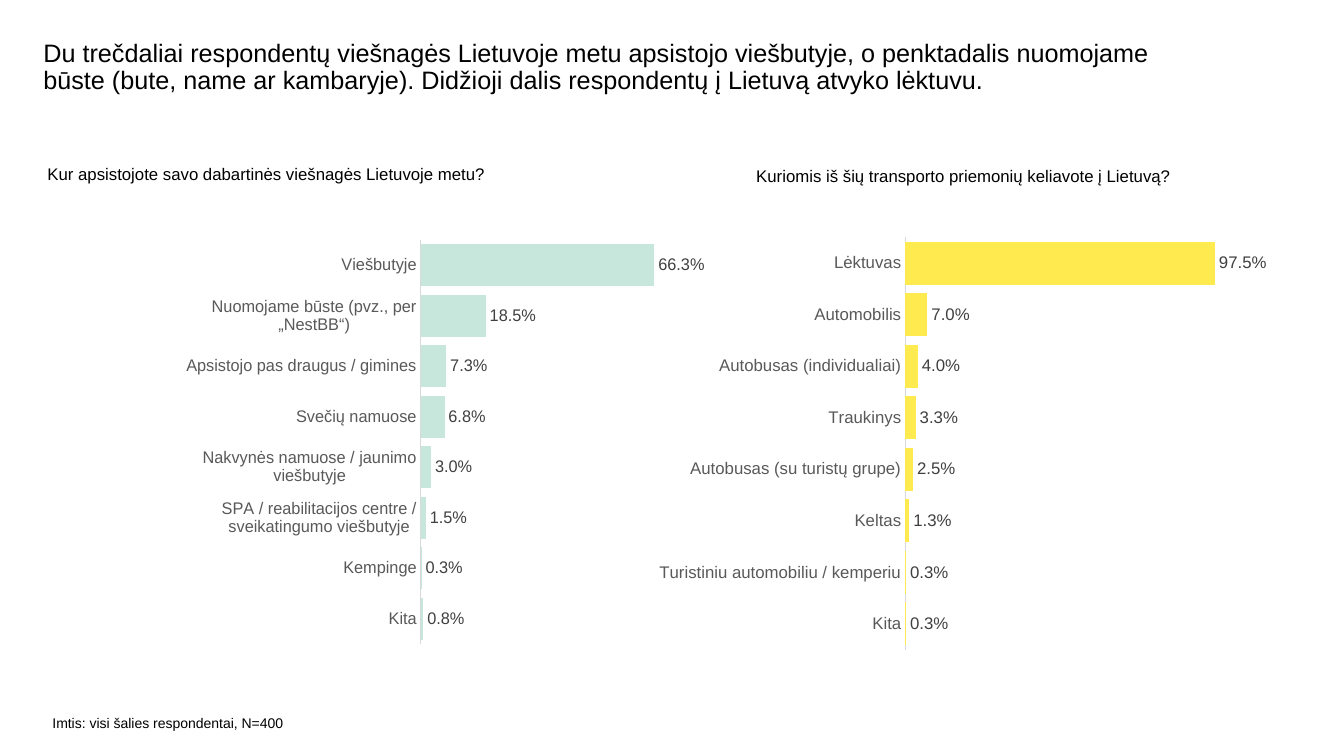
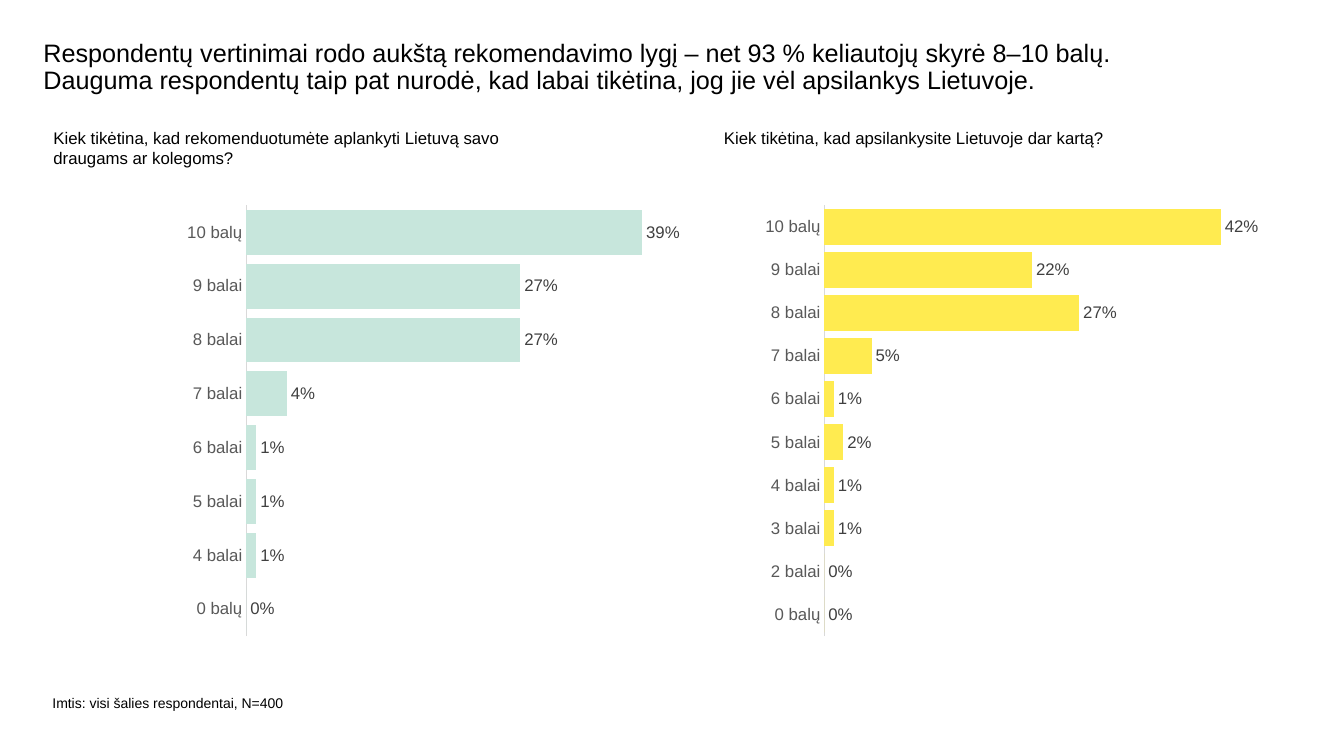
from dataclasses import dataclass

from lxml.etree import SubElement
from pptx import Presentation
from pptx.chart.data import CategoryChartData
from pptx.dml.color import RGBColor
from pptx.enum.chart import XL_CHART_TYPE, XL_LABEL_POSITION, XL_TICK_MARK
from pptx.oxml.ns import qn
from pptx.util import Inches, Pt


@dataclass(frozen=True)
class Theme:
    font: str = "Arial"
    ink: str = "000000"
    category: str = "595959"
    value: str = "404040"
    axis: str = "D9D9D9"
    mint: str = "C7E6DC"
    yellow: str = "FFEB50"
    title_size: int = 18
    body_size: int = 12
    note_size: int = 10


THEME = Theme()
TITLE_PLACE = (0.43, 0.4, 11.25, 0.6)
SAMPLE_NOTE = "Imtis: visi šalies respondentai, N=400"
BLANK_LAYOUT = 6

LODGING = [
    ("Viešbutyje", 0.663),
    ("Nuomojame būste (pvz., per „NestBB“)", 0.185),
    ("Apsistojo pas draugus / gimines", 0.073),
    ("Svečių namuose", 0.068),
    ("Nakvynės namuose / jaunimo viešbutyje", 0.03),
    ("SPA / reabilitacijos centre / sveikatingumo viešbutyje", 0.015),
    ("Kempinge", 0.003),
    ("Kita", 0.008),
]
TRANSPORT = [
    ("Lėktuvas", 0.975),
    ("Automobilis", 0.07),
    ("Autobusas (individualiai)", 0.04),
    ("Traukinys", 0.033),
    ("Autobusas (su turistų grupe)", 0.025),
    ("Keltas", 0.013),
    ("Turistiniu automobiliu / kemperiu", 0.003),
    ("Kita", 0.003),
]
RECOMMEND = [
    ("10 balų", 0.39), ("9 balai", 0.27), ("8 balai", 0.27), ("7 balai", 0.04),
    ("6 balai", 0.01), ("5 balai", 0.01), ("4 balai", 0.01), ("0 balų", 0),
]
RETURN_VISIT = [
    ("10 balų", 0.42), ("9 balai", 0.22), ("8 balai", 0.27), ("7 balai", 0.05),
    ("6 balai", 0.01), ("5 balai", 0.02), ("4 balai", 0.01), ("3 balai", 0.01),
    ("2 balai", 0), ("0 balų", 0),
]


def style_font(font, size, color):
    font.name = THEME.font
    font.size = Pt(size)
    font.color.rgb = RGBColor.from_string(color)


def add_text(slide, place, text, size=THEME.body_size, line_spacing=None):
    frame = slide.shapes.add_textbox(*map(Inches, place)).text_frame
    frame.word_wrap = True
    frame.margin_left = frame.margin_top = frame.margin_right = frame.margin_bottom = 0
    paragraph = frame.paragraphs[0]
    paragraph.line_spacing = line_spacing
    run = paragraph.add_run()
    run.text = text
    style_font(run.font, size, THEME.ink)


def add_survey_slide(deck, title, note_place):
    slide = deck.slides.add_slide(deck.slide_layouts[BLANK_LAYOUT])
    add_text(slide, TITLE_PLACE, title, THEME.title_size, 0.9)
    add_text(slide, note_place, SAMPLE_NOTE, THEME.note_size)
    return slide


def set_inner_plot(chart, x, y, w, h):
    plot_area = chart.plots[0]._element.getparent()
    layout = plot_area.find(qn("c:layout"))
    if layout is None:
        layout = SubElement(plot_area, qn("c:layout"))
        plot_area.insert(0, layout)
    manual = SubElement(layout, qn("c:manualLayout"))
    settings = [("layoutTarget", "inner"), ("xMode", "edge"), ("yMode", "edge"),
                ("x", x), ("y", y), ("w", w), ("h", h)]
    for tag, setting in settings:
        SubElement(manual, qn(f"c:{tag}")).set("val", str(setting))


def add_bars(slide, place, answers, color, number_format, top_down=False):
    ordered = answers if top_down else answers[::-1]
    data = CategoryChartData(number_format=number_format)
    data.categories = [answer for answer, share in ordered]
    data.add_series("Series 1", [share for answer, share in ordered])
    chart = slide.shapes.add_chart(
        XL_CHART_TYPE.BAR_CLUSTERED, *map(Inches, place), data).chart
    chart.has_legend = False
    chart.has_title = False
    style_font(chart.font, THEME.body_size, THEME.ink)

    categories = chart.category_axis
    categories.reverse_order = top_down
    categories.has_major_gridlines = False
    categories.major_tick_mark = XL_TICK_MARK.NONE
    categories.minor_tick_mark = XL_TICK_MARK.NONE
    categories.format.line.color.rgb = RGBColor.from_string(THEME.axis)
    categories.format.line.width = Pt(0.75)
    style_font(categories.tick_labels.font, THEME.body_size, THEME.category)

    chart.value_axis.has_major_gridlines = False
    chart.value_axis.visible = False

    bars = chart.plots[0]
    bars.gap_width = 20
    bars.vary_by_categories = False
    fill = bars.series[0].format.fill
    fill.solid()
    fill.fore_color.rgb = RGBColor.from_string(color)

    bars.has_data_labels = True
    labels = bars.data_labels
    labels.show_value = True
    labels.position = XL_LABEL_POSITION.OUTSIDE_END
    labels.number_format = number_format
    labels.number_format_is_linked = False
    style_font(labels.font, THEME.body_size, THEME.value)
    return chart


def add_stay_slide(deck):
    slide = add_survey_slide(
        deck,
        "Du trečdaliai respondentų viešnagės Lietuvoje metu apsistojo viešbutyje, "
        "o penktadalis nuomojame būste (bute, name ar kambaryje). "
        "Didžioji dalis respondentų į Lietuvą atvyko lėktuvu.",
        (0.52, 7.09, 2.53, 0.24))
    add_text(slide, (0.47, 1.62, 6.5, 0.61),
             "Kur apsistojote savo dabartinės viešnagės Lietuvoje metu?")
    add_text(slide, (7.5, 1.64, 5.21, 0.61),
             "Kuriomis iš šių transporto priemonių keliavote į Lietuvą?")
    lodging = add_bars(slide, (1.51, 2.23, 5.48, 4.31), LODGING, THEME.mint, "0.0%")
    set_inner_plot(lodging, 0.5, 0.035, 0.46, 0.93)
    add_bars(slide, (6.41, 2.27, 6.48, 4.26), TRANSPORT, THEME.yellow, "0.0%")


def add_loyalty_slide(deck):
    slide = add_survey_slide(
        deck,
        "Respondentų vertinimai rodo aukštą rekomendavimo lygį – net 93 % keliautojų "
        "skyrė 8–10 balų. Dauguma respondentų taip pat nurodė, kad labai tikėtina, "
        "jog jie vėl apsilankys Lietuvoje.",
        (0.52, 6.89, 3.86, 0.44))
    add_text(slide, (0.53, 1.27, 4.99, 0.4),
             "Kiek tikėtina, kad rekomenduotumėte aplankyti Lietuvą savo "
             "draugams ar kolegoms?")
    add_text(slide, (7.18, 1.27, 5.5, 0.2),
             "Kiek tikėtina, kad apsilankysite Lietuvoje dar kartą?")
    add_bars(slide, (1.75, 1.95, 5.33, 4.45), RECOMMEND, THEME.mint, "0%", True)
    add_bars(slide, (7.49, 1.95, 5, 4.45), RETURN_VISIT, THEME.yellow, "0%", True)


def main():
    deck = Presentation()
    deck.slide_width = Inches(13.33)
    deck.slide_height = Inches(7.5)
    add_stay_slide(deck)
    add_loyalty_slide(deck)
    deck.save("out.pptx")


if __name__ == "__main__":
    main()
